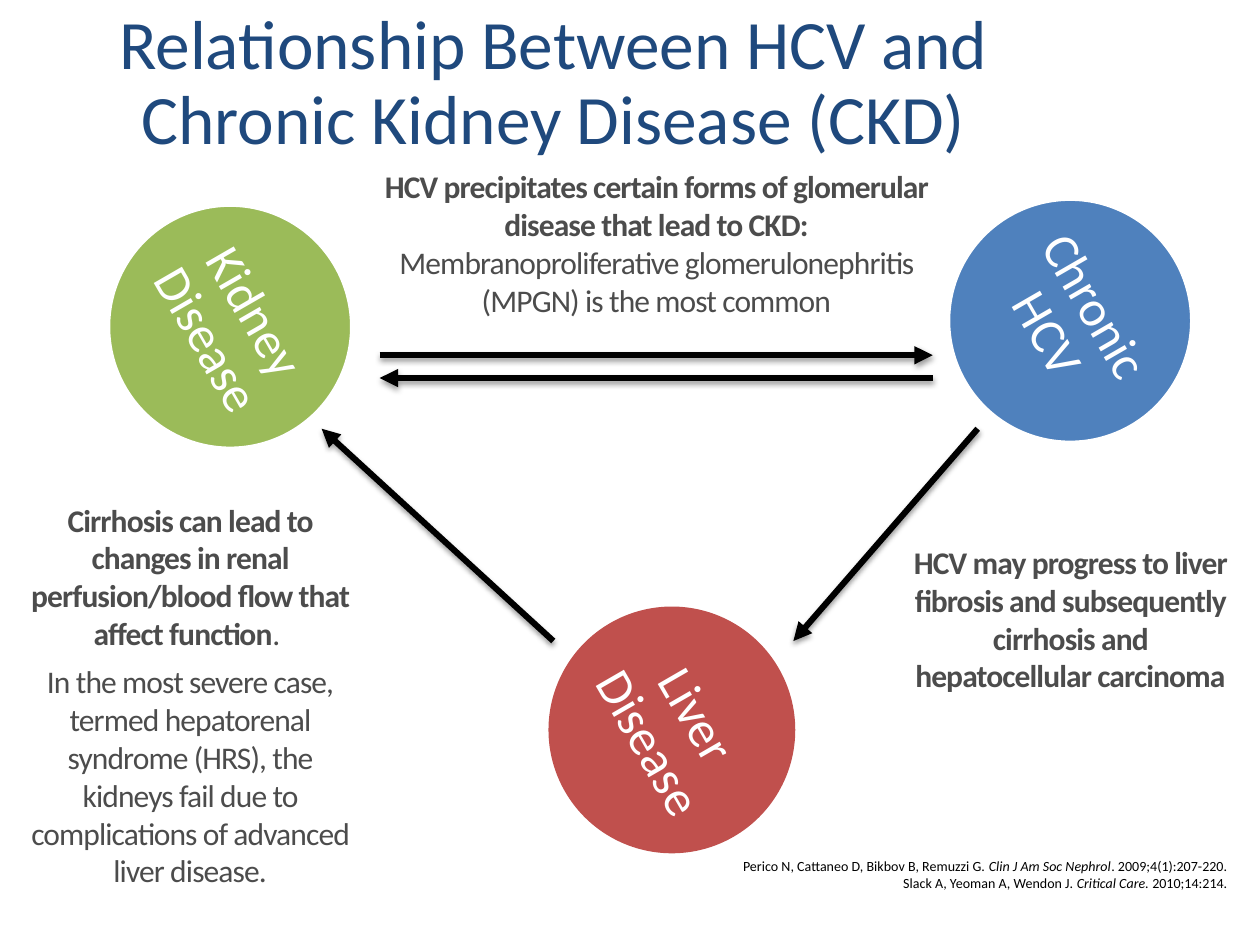
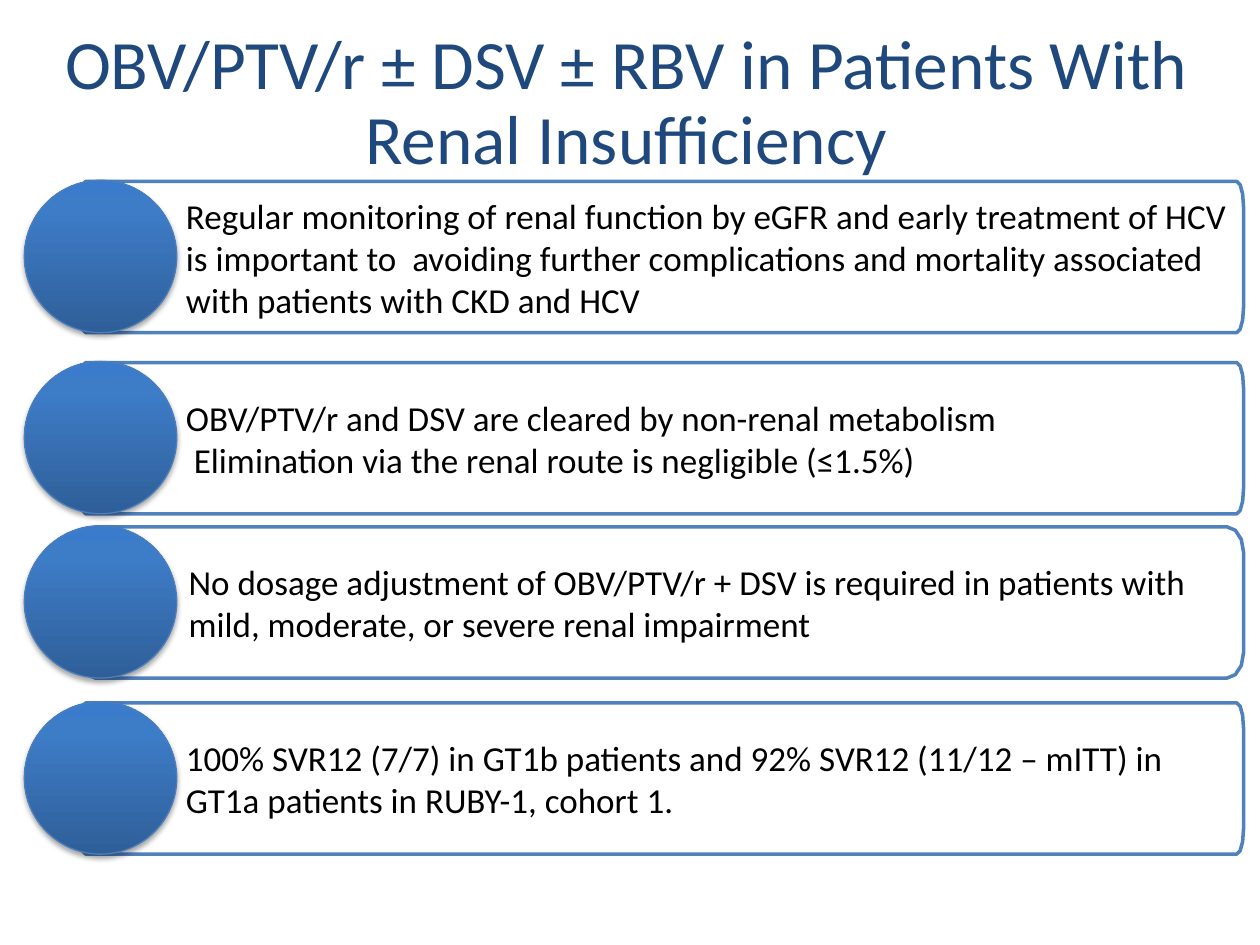
"""Build two slides on HCV, chronic kidney disease and treatment."""
import copy
import math

import lxml.etree
import pptx
import pptx.dml.color
import pptx.enum.shapes
import pptx.enum.text
import pptx.oxml.ns
import pptx.util

Pt = pptx.util.Pt
RGBColor = pptx.dml.color.RGBColor
ALIGN = pptx.enum.text.PP_ALIGN
ANCHOR = pptx.enum.text.MSO_ANCHOR
SHAPE = pptx.enum.shapes.MSO_SHAPE
qn = pptx.oxml.ns.qn

NAVY = RGBColor(0x1F, 0x49, 0x7D)
BLUE = RGBColor(0x4F, 0x81, 0xBD)
GREEN = RGBColor(0x9B, 0xBB, 0x59)
RED = RGBColor(0xC0, 0x50, 0x4D)
GREY = RGBColor(0x4C, 0x4C, 0x4C)
BLACK = RGBColor(0, 0, 0)
WHITE = RGBColor(255, 255, 255)
MARKER_DARK = RGBColor(0x2F, 0x5F, 0x99)
MARKER_LIGHT = RGBColor(0x3D, 0x7C, 0xC7)
MARKER_TOP = RGBColor(0x3A, 0x7C, 0xCB)
MARKER_EDGE = RGBColor(0x4B, 0x7E, 0xBC)

FONT = "Calibri"
DISEASE_SIZE = 139
BAR_LEFT, BAR_WIDTH, BAR_HEIGHT = 45.2, 665.4, 86.4
MARKER_LEFT, MARKER_SIZE = 13.9, 87.1


def write_text(frame, paragraphs, size=18, color=BLACK, bold=False, align=ALIGN.CENTER,
               anchor=ANCHOR.TOP, inset=None, line=1.0, after=0, tracking=0, indent=0):
    """Fill a frame with paragraphs, each a list of (text, font overrides) runs."""
    frame.word_wrap = True
    frame.auto_size = pptx.enum.text.MSO_AUTO_SIZE.NONE
    frame.vertical_anchor = anchor
    if inset is not None:
        for side in ("left", "top", "right", "bottom"):
            setattr(frame, f"margin_{side}", Pt(inset))
    for index, runs in enumerate(paragraphs):
        paragraph = frame.paragraphs[0] if index == 0 else frame.add_paragraph()
        paragraph.alignment = align
        paragraph.line_spacing = line
        paragraph.space_before = Pt(0)
        paragraph.space_after = Pt(after)
        if indent:
            paragraph._p.get_or_add_pPr().set("marL", str(Pt(indent)))
        for text, overrides in runs:
            run = paragraph.add_run()
            run.text = text
            run.font.name = FONT
            run.font.size = Pt(size)
            run.font.color.rgb = color
            run.font.bold = overrides.get("bold", bold)
            run.font.italic = overrides.get("italic", False)
            if tracking:
                run._r.get_or_add_rPr().set("spc", str(round(tracking * 100)))


def add_bullet(paragraph, left, hanging):
    """Turn a paragraph into a bulleted one with a hanging indent."""
    properties = paragraph._p.get_or_add_pPr()
    properties.set("marL", str(Pt(left)))
    properties.set("indent", str(-Pt(hanging)))
    lxml.etree.SubElement(properties, qn("a:buChar"), char="•")


def add_shadow(element, opacity, distance):
    """Give a shape or connector a soft shadow below it."""
    effects = lxml.etree.SubElement(element.spPr, qn("a:effectLst"))
    shadow = lxml.etree.SubElement(
        effects, qn("a:outerShdw"), blurRad=str(Pt(3.1)), dist=str(Pt(distance)),
        dir="5400000", rotWithShape="0")
    tint = lxml.etree.SubElement(shadow, qn("a:srgbClr"), val=str(BLACK))
    lxml.etree.SubElement(tint, qn("a:alpha"), val=str(opacity * 1000))


def add_titled_slide(deck, title, left, top, width, height):
    """Add a slide whose title placeholder sits in the given box."""
    slide = deck.slides.add_slide(deck.slide_layouts[5])
    heading = slide.shapes.title
    heading.left, heading.top, heading.width, heading.height = map(Pt, (left, top, width, height))
    write_text(heading.text_frame, [[(title, {})]], size=39.6, color=NAVY,
               anchor=ANCHOR.MIDDLE, line=0.9)
    return slide


def add_note(slide, left, top, width, height, paragraphs, **text_format):
    """Add a free text box."""
    note = slide.shapes.add_textbox(Pt(left), Pt(top), Pt(width), Pt(height))
    write_text(note.text_frame, paragraphs, **text_format)


def add_disease(slide, label, left, top, fill, edge):
    """Add a disease circle with its label turned by 60 degrees."""
    disease = slide.shapes.add_shape(SHAPE.OVAL, Pt(left), Pt(top),
                                     Pt(DISEASE_SIZE), Pt(DISEASE_SIZE))
    disease.rotation = 60
    disease.shadow.inherit = False
    disease.fill.solid()
    disease.fill.fore_color.rgb = fill
    disease.line.color.rgb = edge
    disease.line.width = Pt(2)
    write_text(disease.text_frame, [[(label, {})]], size=29, color=WHITE,
               anchor=ANCHOR.MIDDLE, inset=2.6, line=0.9)


def add_pathway(slide, start, end):
    """Add a thick arrow from start to end."""
    pathway = slide.shapes.add_connector(pptx.enum.shapes.MSO_CONNECTOR.STRAIGHT,
                                         *map(Pt, start + end))
    pathway.line.color.rgb = BLACK
    pathway.line.width = Pt(3.5)
    outline = pathway._element.spPr.find(qn("a:ln"))
    lxml.etree.SubElement(outline, qn("a:tailEnd"), type="triangle")
    add_shadow(pathway._element, 38, 1.6)


def rounded_outline(left, top, width, height, radius_x, radius_y):
    """Return the corner points of a box with elliptical corners."""
    right, bottom = left + width - radius_x, top + height - radius_y
    centers = [(right, bottom), (left + radius_x, bottom),
               (left + radius_x, top + radius_y), (right, top + radius_y)]
    return [(Pt(x + radius_x * math.cos(math.radians(angle))),
             Pt(y + radius_y * math.sin(math.radians(angle))))
            for quarter, (x, y) in enumerate(centers)
            for angle in range(quarter * 90, quarter * 90 + 91, 30)]


def add_marker(slide, top):
    """Add a round shaded marker at the left end of a bar."""
    marker = slide.shapes.add_shape(SHAPE.OVAL, Pt(MARKER_LEFT), Pt(top),
                                    Pt(MARKER_SIZE), Pt(MARKER_SIZE))
    marker.fill.gradient()
    marker.fill.gradient_angle = 90
    stops = marker._element.spPr.find(qn("a:gradFill")).find(qn("a:gsLst"))
    stops.append(copy.deepcopy(stops[-1]))
    for stop, position, color in zip(marker.fill.gradient_stops, (0, 0.8, 1),
                                     (MARKER_DARK, MARKER_LIGHT, MARKER_TOP)):
        stop.position = position
        stop.color.rgb = color
    marker.line.color.rgb = MARKER_EDGE
    marker.line.width = Pt(0.75)
    add_shadow(marker._element, 35, 1.8)


def add_finding(slide, top, finding, detail=None, radius_x=3.8, inset=7.2):
    """Add an outlined bar with a finding, an optional bulleted detail and a marker."""
    outline = rounded_outline(BAR_LEFT, top, BAR_WIDTH, BAR_HEIGHT, radius_x, 14.4)
    builder = slide.shapes.build_freeform(*outline[0])
    builder.add_line_segments(outline[1:], close=True)
    bar = builder.convert_to_shape()
    bar.shadow.inherit = False
    bar.fill.solid()
    bar.fill.fore_color.rgb = WHITE
    bar.line.color.rgb = BLUE
    bar.line.width = Pt(2)
    lines = [finding, detail] if detail else [finding]
    write_text(bar.text_frame, [[(line, {})] for line in lines], size=20, align=ALIGN.LEFT,
               anchor=ANCHOR.MIDDLE, inset=inset, indent=54)
    if detail:
        add_bullet(bar.text_frame.paragraphs[1], 58.5, 22.5)
    add_marker(slide, top - 0.7)


def build_relationship(deck):
    """Build the cycle of kidney disease, HCV and liver disease."""
    slide = add_titled_slide(deck, "Relationship Between HCV and Chronic Kidney Disease (CKD)",
                             33.3, 21.8, 565.9, 52.6)
    add_disease(slide, "Kidney Disease", 62, 117.2, GREEN, WHITE)
    add_disease(slide, "Chronic HCV", 542, 113.8, BLUE, WHITE)
    add_disease(slide, "Liver Disease", 314.4, 347.6, RED, RED)
    for start, end in [((217, 203), (533, 203)), ((533, 216), (217, 216)),
                       ((558.7, 245), (453.4, 366.3)), ((316.2, 366.3), (183.8, 245))]:
        add_pathway(slide, start, end)

    add_note(slide, 74.2, 486.7, 634.3, 26.6, [
        [("Perico N, Cattaneo D, Bikbov B, Remuzzi G. ", {}),
         ("Clin J Am Soc Nephrol", {"italic": True}), (". 2009;4(1):207-220.", {})],
        [("Slack A, Yeoman A, Wendon J. ", {}),
         ("Critical Care. ", {"italic": True}), ("2010;14:214.", {})],
    ], size=8, align=ALIGN.RIGHT)

    explanation = {"color": GREY, "tracking": -0.5}
    plain, strong = {}, {"bold": True}
    add_note(slide, 16.5, 286.1, 184.3, 199.4, [
        [("Cirrhosis can lead to changes in renal perfusion/blood flow that affect function",
          strong), (". ", plain)],
        [("In the most severe case, termed hepatorenal syndrome (HRS), the kidneys fail "
          "due to complications of advanced liver disease.", plain)],
    ], inset=0, after=6, **explanation)
    add_note(slide, 522, 310.3, 179.3, 111.6, [
        [("HCV may progress to liver fibrosis and subsequently cirrhosis and "
          "hepatocellular carcinoma", strong)],
    ], inset=0, after=6, **explanation)
    add_note(slide, 212.7, 92, 324.7, 94.3, [
        [("HCV precipitates certain forms of glomerular disease that lead to CKD:", strong)],
        [("Membranoproliferative glomerulonephritis (MPGN) is the most common", plain)],
    ], **explanation)


def build_findings(deck):
    """Build the list of findings in renal insufficiency."""
    slide = add_titled_slide(deck, "OBV/PTV/r ± DSV ± RBV in Patients With Renal Insufficiency",
                             28.5, 46.8, 658.8, 25.9)
    add_finding(slide, 103.7,
                "Regular monitoring of renal function by eGFR and early treatment of HCV is "
                "important to  avoiding further complications and mortality associated with "
                "patients with CKD and HCV")
    add_finding(slide, 207.2, "OBV/PTV/r and DSV are cleared by non-renal metabolism",
                detail="Elimination via the renal route is negligible (≤1.5%)")
    add_finding(slide, 301.1,
                "No dosage adjustment of OBV/PTV/r + DSV is required in patients with mild, "
                "moderate, or severe renal impairment", radius_x=9.4, inset=8.6)
    add_finding(slide, 401.7,
                "100% SVR12 (7/7) in GT1b patients and 92% SVR12 (11/12 – mITT) in GT1a "
                "patients in RUBY-1, cohort 1.")


def main():
    """Build and save the deck."""
    deck = pptx.Presentation()
    deck.slide_width, deck.slide_height = Pt(720), Pt(540)
    build_relationship(deck)
    build_findings(deck)
    deck.save("out.pptx")


if __name__ == "__main__":
    main()
